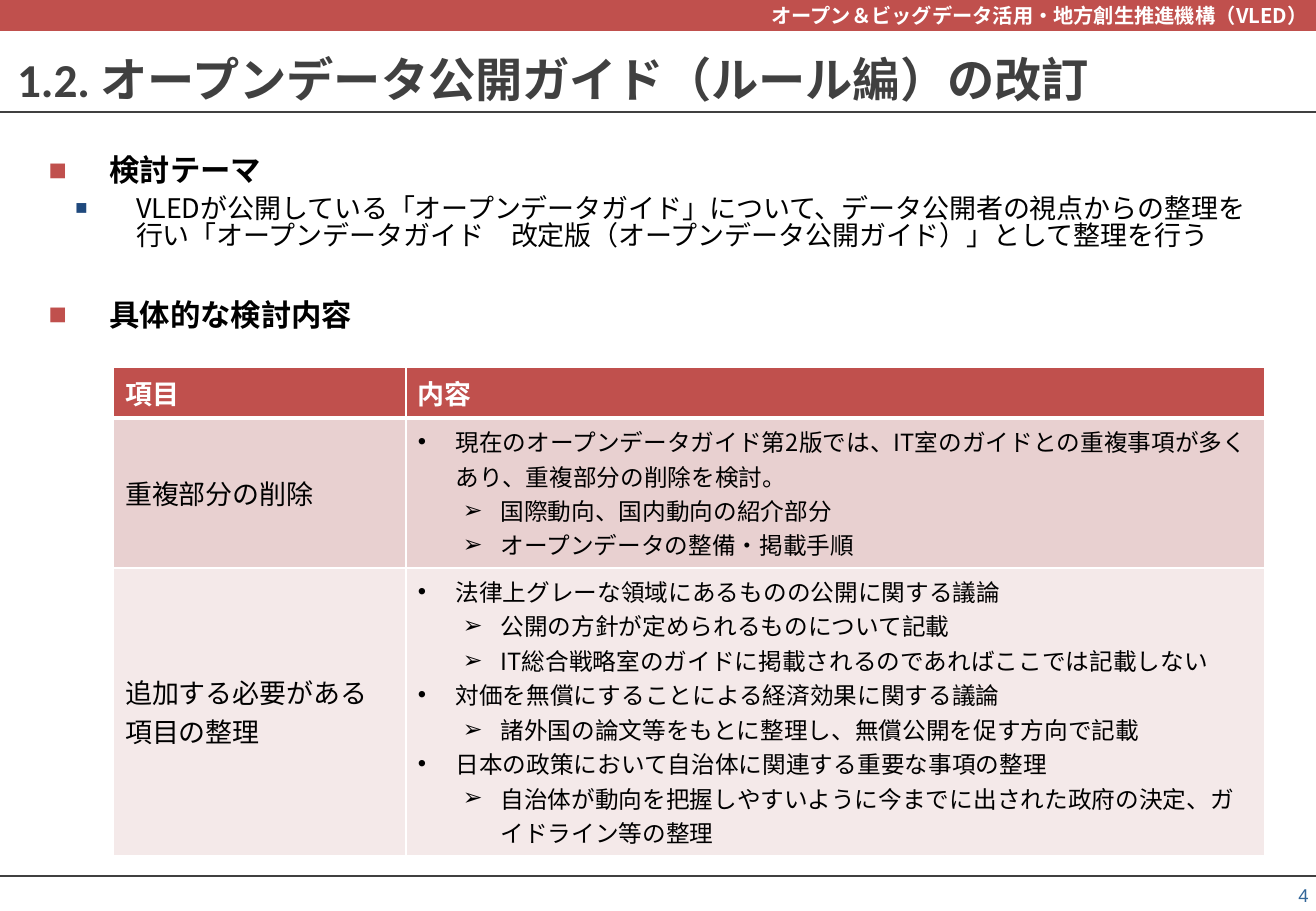
from dataclasses import dataclass

import pptx
import pptx.dml.color
import pptx.enum.shapes
import pptx.enum.text
import pptx.oxml.ns
import pptx.util
from lxml import etree

PX = 9144  # EMU in one px, 100 px to the inch
ALIGN = pptx.enum.text.PP_ALIGN
ANCHOR = pptx.enum.text.MSO_ANCHOR


@dataclass(frozen=True)
class Theme:
    red: str = "C0504D"
    navy: str = "1F497D"
    grey: str = "404040"
    page_blue: str = "336699"
    white: str = "FFFFFF"
    black: str = "000000"
    bands: tuple = ("E8D0D0", "F4E9E9")
    title: int = 28
    heading: int = 18
    text: int = 16
    detail: int = 14
    banner: int = 12
    number: int = 11
    cjk: str = "Noto Sans CJK JP"
    latin_title: str = "Calibri"
    arial: str = "Arial"


THEME = Theme()


@dataclass(frozen=True)
class Bullet:
    char: str
    color: str
    left: int
    hang: int
    level: int = 0
    percent: int = 100


@dataclass(frozen=True)
class Line:
    text: str
    size: int
    color: str = THEME.black
    bold: bool = False
    font: str = THEME.cjk
    bullet: Bullet | None = None
    align: ALIGN = ALIGN.LEFT
    before: int = 0
    spacing: float = 1.0


@dataclass(frozen=True)
class Area:
    left: int
    top: int
    width: int
    height: int

    def emu(self) -> tuple:
        return tuple(px(v) for v in (self.left, self.top, self.width, self.height))


def px(value: int) -> pptx.util.Emu:
    return pptx.util.Emu(value * PX)


def rgb(color: str) -> pptx.dml.color.RGBColor:
    return pptx.dml.color.RGBColor.from_string(color)


def add_child(parent, tag: str, **attributes):
    return etree.SubElement(parent, pptx.oxml.ns.qn(tag), **attributes)


def add_bullet(para, bullet: Bullet) -> None:
    para.level = bullet.level
    properties = para._p.get_or_add_pPr()
    properties.set("marL", str(px(bullet.left)))
    properties.set("indent", str(px(-bullet.hang)))
    add_child(add_child(properties, "a:buClr"), "a:srgbClr", val=bullet.color)
    add_child(properties, "a:buSzPct", val=str(bullet.percent * 1000))
    add_child(properties, "a:buFont", typeface=THEME.arial)
    add_child(properties, "a:buChar", char=bullet.char)


def write(frame, lines: list[Line]) -> None:
    for index, line in enumerate(lines):
        para = frame.paragraphs[0] if index == 0 else frame.add_paragraph()
        if line.bullet:
            add_bullet(para, line.bullet)
        para.alignment = line.align
        para.line_spacing = line.spacing
        para.space_before = pptx.util.Pt(line.before)
        span = para.add_run()
        span.text = line.text
        span.font.size = pptx.util.Pt(line.size)
        span.font.bold = line.bold
        span.font.color.rgb = rgb(line.color)
        span.font.name = line.font
        add_child(span._r.get_or_add_rPr(), "a:ea", typeface=THEME.cjk)


def fill_frame(shape, lines: list[Line], anchor: ANCHOR, side: int, edge: int) -> None:
    frame = shape.text_frame
    frame.word_wrap = True
    frame.auto_size = pptx.enum.text.MSO_AUTO_SIZE.NONE
    frame.vertical_anchor = anchor
    frame.margin_left = frame.margin_right = px(side)
    frame.margin_top = frame.margin_bottom = px(edge)
    write(frame, lines)


def add_rule(page, top: int, width: int) -> None:
    rule = page.shapes.add_connector(
        pptx.enum.shapes.MSO_CONNECTOR.STRAIGHT, 0, px(top), px(width), px(top))
    rule.line.color.rgb = rgb(THEME.grey)
    rule.line.width = pptx.util.Pt(1)
    add_child(rule._element.spPr, "a:effectLst")


def format_cell(cell, lines: list[Line], fill: str, top: int, bottom: int) -> None:
    cell.vertical_anchor = ANCHOR.MIDDLE
    properties = cell._tc.get_or_add_tcPr()
    for tag, points in (("a:lnL", 1), ("a:lnR", 1), ("a:lnT", top), ("a:lnB", bottom)):
        border = add_child(properties, tag, w=str(pptx.util.Pt(points)))
        add_child(add_child(border, "a:solidFill"), "a:srgbClr", val=THEME.white)
    cell.fill.solid()
    cell.fill.fore_color.rgb = rgb(fill)
    write(cell.text_frame, lines)


def add_grid(page, area: Area, columns: list[int], heights: list[int], rows: list) -> None:
    table = page.shapes.add_table(len(heights), len(columns), *area.emu()).table
    table.horz_banding = False
    for column, width in zip(table.columns, columns):
        column.width = px(width)
    fills = (THEME.red, *THEME.bands)
    for index, (height, cells) in enumerate(zip(heights, rows)):
        table.rows[index].height = px(height)
        for column, lines in enumerate(cells):
            format_cell(table.cell(index, column), lines, fills[index],
                        3 if index == 1 else 1, 3 if index == 0 else 1)


SECTION = Bullet("■", THEME.red, 52, 50)
THEME_ITEM = Bullet("■", THEME.navy, 74, 50, 1, 75)
POINT = Bullet("•", THEME.black, 31, 31)
SUBPOINT = Bullet("➢", THEME.black, 68, 31, 1)


def head(text: str) -> list[Line]:
    return [Line(text, THEME.text, THEME.white, True)]


def label(text: str) -> list[Line]:
    return [Line(text, THEME.text)]


def point(text: str) -> Line:
    return Line(text, THEME.detail, bullet=POINT)


def subpoint(text: str) -> Line:
    return Line(text, THEME.detail, bullet=SUBPOINT)


BODY = [
    Line("検討テーマ", THEME.heading, bold=True, bullet=SECTION, spacing=0.85),
    Line("VLEDが公開している「オープンデータガイド」について、データ公開者の視点からの整理を"
         "行い「オープンデータガイド　改定版（オープンデータ公開ガイド）」として整理を行う",
         THEME.text, bullet=THEME_ITEM, before=5, spacing=0.85),
    Line("具体的な検討内容", THEME.heading, bold=True, bullet=SECTION, before=30, spacing=0.85),
]
ROWS = [
    [head("項目"), head("内容")],
    [label("重複部分の削除"), [
        point("現在のオープンデータガイド第2版では、IT室のガイドとの重複事項が多くあり、重複部分の削除を検討。"),
        subpoint("国際動向、国内動向の紹介部分"),
        subpoint("オープンデータの整備・掲載手順")]],
    [label("追加する必要がある項目の整理"), [
        point("法律上グレーな領域にあるものの公開に関する議論"),
        subpoint("公開の方針が定められるものについて記載"),
        subpoint("IT総合戦略室のガイドに掲載されるのであればここでは記載しない"),
        point("対価を無償にすることによる経済効果に関する議論"),
        subpoint("諸外国の論文等をもとに整理し、無償公開を促す方向で記載"),
        point("日本の政策において自治体に関連する重要な事項の整理"),
        subpoint("自治体が動向を把握しやすいように今までに出された政府の決定、ガイドライン等の整理")]],
]


def main() -> None:
    deck = pptx.Presentation()
    deck.slide_width, deck.slide_height = px(1083), px(750)
    page = deck.slides.add_slide(deck.slide_layouts[5])

    # Banner and rules
    banner = page.shapes.add_shape(
        pptx.enum.shapes.MSO_SHAPE.RECTANGLE, *Area(0, 0, 1083, 25).emu())
    banner.shadow.inherit = False
    banner.fill.solid()
    banner.fill.fore_color.rgb = banner.line.color.rgb = rgb(THEME.red)
    banner.line.width = pptx.util.Pt(0.75)
    fill_frame(banner, [Line("オープン＆ビッグデータ活用・地方創生推進機構（VLED）", THEME.banner,
                             THEME.white, True, align=ALIGN.RIGHT)], ANCHOR.MIDDLE, 7, 4)
    for top in (721, 92):
        add_rule(page, top, 1083)

    # Title
    title = page.shapes.title
    title.left, title.top, title.width, title.height = Area(14, 33, 1027, 64).emu()
    fill_frame(title, [Line("1.2. オープンデータ公開ガイド（ルール編）の改訂", THEME.title,
                            THEME.grey, True, THEME.latin_title)], ANCHOR.MIDDLE, 0, 0)

    # Body text and page number
    body = page.shapes.add_textbox(*Area(38, 125, 1000, 581).emu())
    fill_frame(body, BODY, ANCHOR.TOP, 0, 4)
    number = page.shapes.add_textbox(*Area(1039, 722, 45, 28).emu())
    fill_frame(number, [Line("4", THEME.number, THEME.page_blue, font=THEME.arial,
                             align=ALIGN.RIGHT)], ANCHOR.BOTTOM, 7, 4)

    # Table of review items
    add_grid(page, Area(93, 302, 948, 387), [241, 707], [42, 119, 226], ROWS)
    deck.save("out.pptx")


if __name__ == "__main__":
    main()
